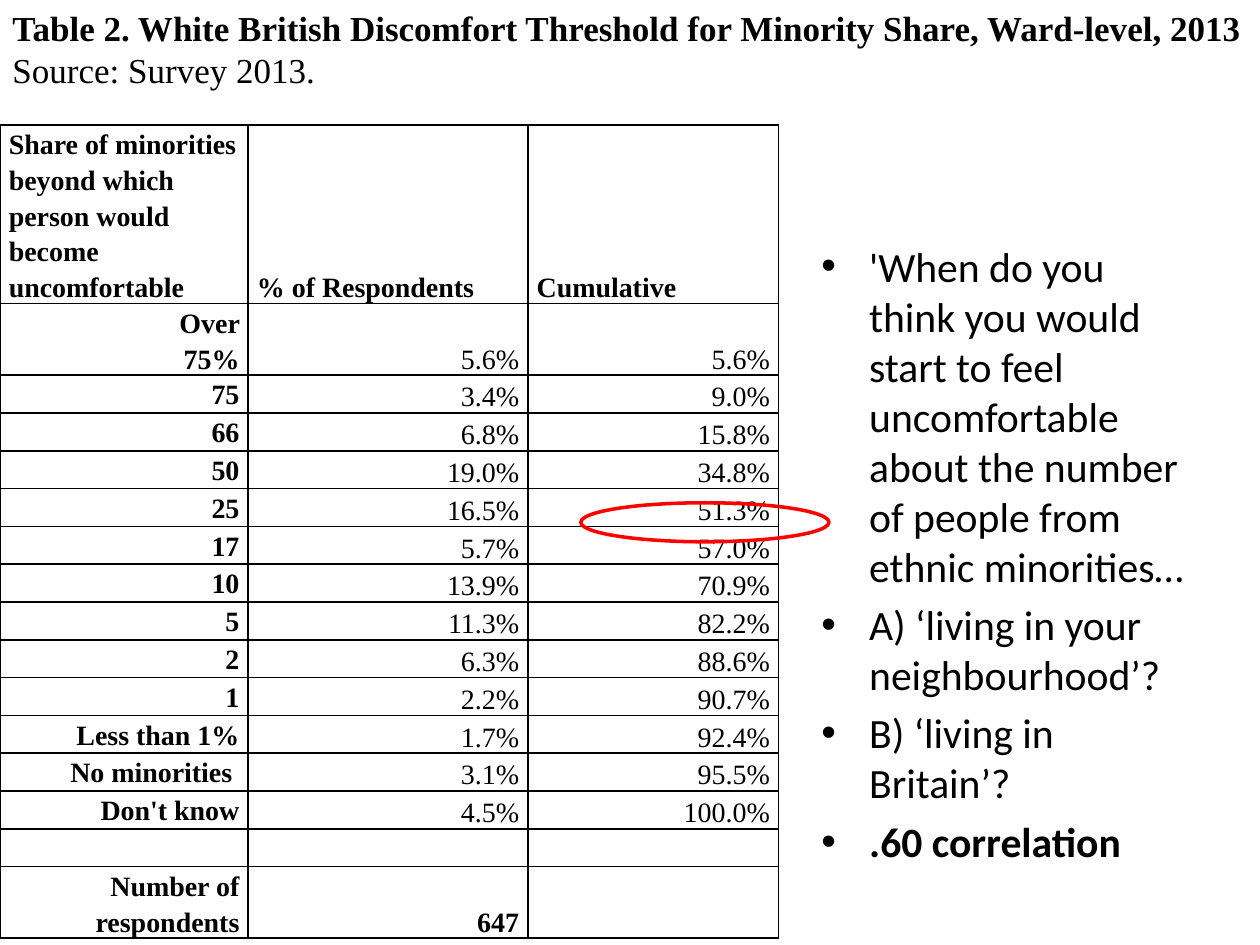
from lxml import etree
from pptx import Presentation
from pptx import util as u
from pptx.dml.color import RGBColor
from pptx.enum import shapes, text
from pptx.oxml import ns

BLACK = RGBColor(0x00, 0x00, 0x00)
RED = RGBColor(0xFF, 0x00, 0x00)
SERIF = "Times New Roman"
SANS = "Calibri"

TITLE = "Table 2. White British Discomfort Threshold for Minority Share, Ward-level, 2013"
SOURCE = "Source: Survey 2013."
HEADERS = [
    ["Share of minorities beyond which", "person would become uncomfortable"],
    ["% of Respondents"],
    ["Cumulative"],
]
ROWS = [
    ("Over 75%", "5.6%", "5.6%"),
    ("75", "3.4%", "9.0%"),
    ("66", "6.8%", "15.8%"),
    ("50", "19.0%", "34.8%"),
    ("25", "16.5%", "51.3%"),
    ("17", "5.7%", "57.0%"),
    ("10", "13.9%", "70.9%"),
    ("5", "11.3%", "82.2%"),
    ("2", "6.3%", "88.6%"),
    ("1", "2.2%", "90.7%"),
    ("Less than 1%", "1.7%", "92.4%"),
    ("No minorities ", "3.1%", "95.5%"),
    ("Don't know", "4.5%", "100.0%"),
    ("", "", ""),
    ("Number of respondents", "647", ""),
]
COLUMN_WIDTHS = [1.97, 2.22, 1.99]
QUESTIONS = [
    "'When do you think you would start to feel uncomfortable about the number "
    "of people from ethnic minorities…",
    "A) ‘living in your neighbourhood’?",
    "B) ‘living in Britain’?",
]
FINDING = ".60 correlation"


def write(paragraph, content, font=SERIF, size=16, bold=False, align=None,
          line_spacing=None, space_before=None):
    """Put formatted text in a paragraph; empty text only sets its size."""
    paragraph.alignment = align
    paragraph.line_spacing = line_spacing
    if space_before is not None:
        paragraph.space_before = u.Pt(space_before)
    if not content:
        end = etree.SubElement(paragraph._p, ns.qn("a:endParaRPr"), sz=str(size * 100))
        etree.SubElement(end, ns.qn("a:latin"), typeface=font)
        return
    run = paragraph.add_run()
    run.text = content
    run.font.name = font
    run.font.size = u.Pt(size)
    run.font.bold = bold
    run.font.color.rgb = BLACK


def indent(paragraph, left, first=0, bullet=None):
    properties = paragraph._p.get_or_add_pPr()
    properties.set("marL", str(u.Inches(left)))
    properties.set("indent", str(u.Inches(first)))
    if bullet:
        etree.SubElement(properties, ns.qn("a:buFont"), typeface="Arial")
        etree.SubElement(properties, ns.qn("a:buChar"), char=bullet)


def add_borders(cell, width=1):
    properties = cell._tc.get_or_add_tcPr()
    for side in ("lnL", "lnR", "lnT", "lnB"):
        line = etree.SubElement(properties, ns.qn("a:" + side), w=str(u.Pt(width)))
        fill = etree.SubElement(line, ns.qn("a:solidFill"))
        etree.SubElement(fill, ns.qn("a:srgbClr"), val=str(BLACK))


class SlideBuilder:
    def __init__(self, slide):
        self.slide = slide

    def text_frame(self, left, top, width, height, wrap=True):
        box = self.slide.shapes.add_textbox(
            u.Inches(left), u.Inches(top), u.Inches(width), u.Inches(height))
        box.text_frame.word_wrap = wrap
        return box.text_frame

    def title(self):
        frame = self.text_frame(0, 0, 10.02, 0.77, wrap=False)
        frame.vertical_anchor = text.MSO_ANCHOR.MIDDLE
        frame.auto_size = text.MSO_AUTO_SIZE.SHAPE_TO_FIT_TEXT
        write(frame.paragraphs[0], TITLE, size=20, bold=True)
        write(frame.add_paragraph(), SOURCE, size=20)

    def cell(self, cell, lines, bold, align, anchor):
        cell.margin_left = cell.margin_right = u.Inches(0.07)
        cell.margin_top = cell.margin_bottom = 0
        cell.vertical_anchor = anchor
        add_borders(cell)
        cell.fill.background()
        frame = cell.text_frame
        for index, line in enumerate(lines):
            paragraph = frame.add_paragraph() if index else frame.paragraphs[0]
            write(paragraph, line, bold=bold, align=align, line_spacing=1.15)

    def table(self):
        heights = [1.24] + [0.3] * len(ROWS)
        table = self.slide.shapes.add_table(
            len(heights), len(COLUMN_WIDTHS), 0, u.Inches(0.99),
            u.Inches(sum(COLUMN_WIDTHS)), u.Inches(sum(heights))).table
        table.first_row = table.horz_banding = False
        for column, width in zip(table.columns, COLUMN_WIDTHS):
            column.width = u.Inches(width)
        for row, height in zip(table.rows, heights):
            row.height = u.Inches(height)

        bottom, top = text.MSO_ANCHOR.BOTTOM, text.MSO_ANCHOR.TOP
        for column, lines in enumerate(HEADERS):
            self.cell(table.cell(0, column), lines, True, None, bottom)
        for row, values in enumerate(ROWS, start=1):
            for column, value in enumerate(values):
                bold = column == 0 or row == len(ROWS)
                self.cell(table.cell(row, column), [value], bold,
                          text.PP_ALIGN.RIGHT, bottom if column else top)
        # The indent breaks the first label over two lines
        indent(table.cell(1, 0).text_frame.paragraphs[0], 1)

    def bullets(self):
        frame = self.text_frame(6.42, 1.86, 3.08, 4.84)
        for index, line in enumerate(QUESTIONS + [FINDING]):
            paragraph = frame.add_paragraph() if index else frame.paragraphs[0]
            write(paragraph, line, font=SANS, size=23.8, bold=line == FINDING,
                  space_before=4.8)
            indent(paragraph, 0.38, -0.38, "•")

    def ellipse(self, left, top, width, height):
        shape = self.slide.shapes.add_shape(
            shapes.MSO_SHAPE.OVAL, u.Inches(left), u.Inches(top),
            u.Inches(width), u.Inches(height))
        shape.shadow.inherit = False
        shape.fill.background()
        shape.line.color.rgb = RED
        shape.line.width = u.Pt(2)


def main():
    presentation = Presentation()
    presentation.slide_width = u.Inches(10)
    presentation.slide_height = u.Inches(7.5)
    builder = SlideBuilder(presentation.slides.add_slide(presentation.slide_layouts[6]))

    # Threshold table with its heading
    builder.table()
    builder.title()
    # Survey questions
    builder.bullets()
    # Mark around the majority threshold
    builder.ellipse(4.61, 3.99, 1.97, 0.31)

    presentation.save("out.pptx")


if __name__ == "__main__":
    main()
